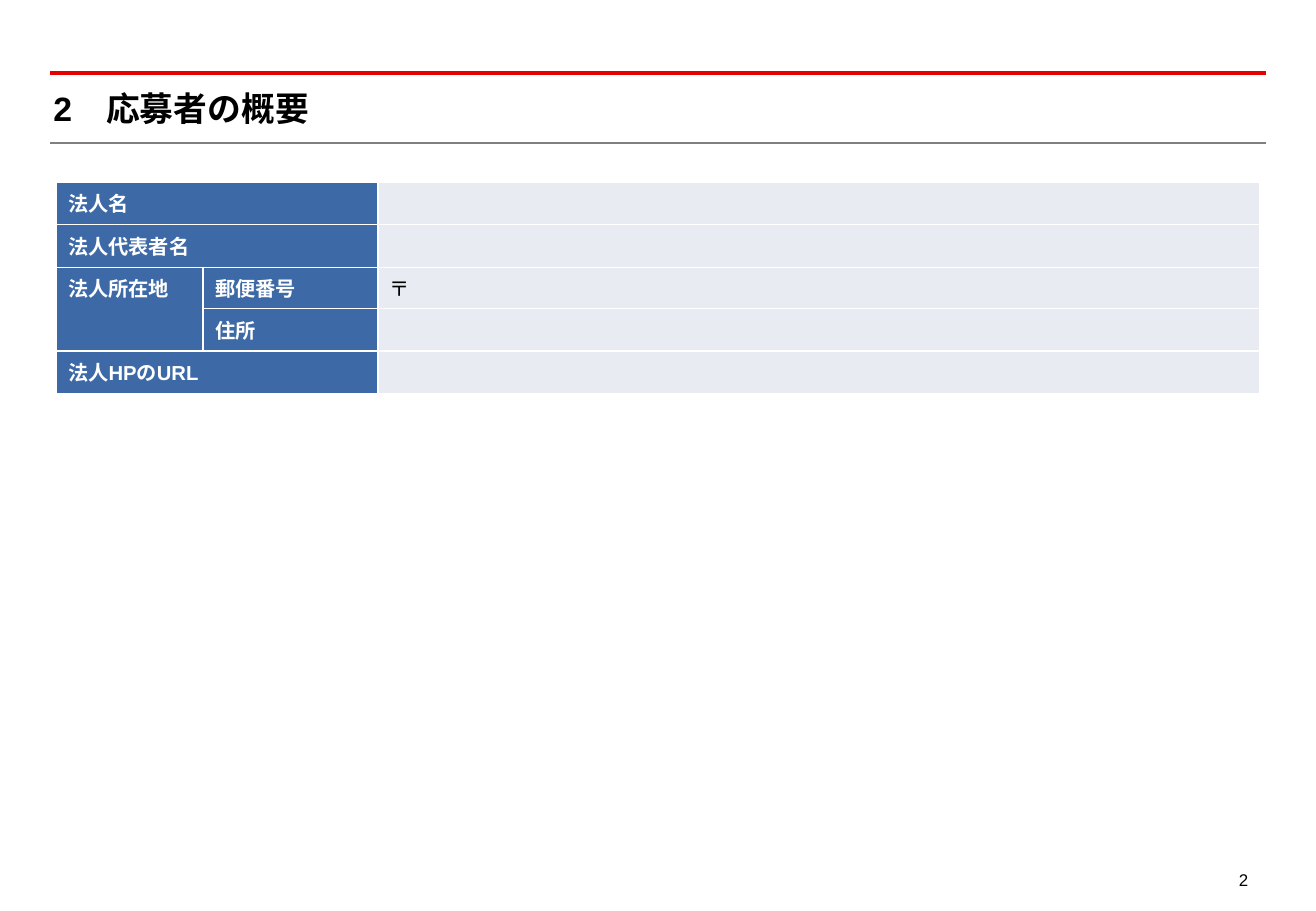
import pptx
import pptx.util
import pptx.dml.color
import pptx.enum.shapes
import pptx.enum.text
import pptx.oxml.ns
import lxml.etree

SLIDE_W, SLIDE_H = 10.83, 7.5
COLORS = {"red": "E60000", "gray": "808080", "black": "000000",
          "white": "FFFFFF", "label": "3D6AA7", "entry": "E8EBF1"}
COLUMNS = (1.21, 1.44, 7.26)
ROWS = (("法人名", None, ""),
        ("法人代表者名", None, ""),
        ("法人所在地", "郵便番号", "〒"),
        ("", "住所", ""),
        ("法人HPのURL", None, ""))


def inches(value):
    """Return a length in inches."""
    return pptx.util.Inches(value)


def rgb(color):
    """Return a named colour."""
    return pptx.dml.color.RGBColor.from_string(COLORS[color])


def add_run(paragraph, words, size, color="black", bold=False):
    """Add one styled run to a paragraph."""
    run = paragraph.add_run()
    run.text = words
    run.font.name = "Arial"
    run.font.size = pptx.util.Pt(size)
    run.font.bold = bold
    run.font.color.rgb = rgb(color)


def add_rule(slide, left, top, width, color, weight):
    """Draw a horizontal rule."""
    rule = slide.shapes.add_connector(
        pptx.enum.shapes.MSO_CONNECTOR.STRAIGHT,
        inches(left), inches(top), inches(left + width), inches(top))
    rule.line.color.rgb = rgb(color)
    rule.line.width = pptx.util.Pt(weight)
    properties = rule._element.spPr
    lxml.etree.SubElement(properties, pptx.oxml.ns.qn("a:effectLst"))


def add_heading(slide, left, top, width, height):
    """Place the section title between its two rules."""
    add_rule(slide, left, top, width, "red", 2)
    add_rule(slide, left, top + height, width, "gray", 1.25)
    title = slide.shapes.add_textbox(
        inches(left + 0.03), inches(top + 0.2 * height),
        inches(width - 0.1), inches(0.6 * height)).text_frame
    title.word_wrap = True
    title.vertical_anchor = pptx.enum.text.MSO_ANCHOR.MIDDLE
    title.margin_left = title.margin_right = 0
    title.margin_top = title.margin_bottom = 0
    add_run(title.paragraphs[0], "2　応募者の概要", 20, bold=True)


def style_cell(cell, fill):
    """Give a cell white borders, tight margins and a fill."""
    properties = cell._tc.get_or_add_tcPr()
    for side in ("lnL", "lnR", "lnT", "lnB"):
        border = lxml.etree.SubElement(
            properties, pptx.oxml.ns.qn("a:" + side), w="12700")
        solid = lxml.etree.SubElement(border, pptx.oxml.ns.qn("a:solidFill"))
        lxml.etree.SubElement(
            solid, pptx.oxml.ns.qn("a:srgbClr"), val=COLORS["white"])
    cell.margin_left = cell.margin_right = inches(0.1)
    cell.margin_top, cell.margin_bottom = inches(0.05), 0
    cell.fill.solid()
    cell.fill.fore_color.rgb = rgb(fill)


def add_applicant_table(slide, left, top, width, height):
    """Place the applicant form with merged label cells."""
    form = slide.shapes.add_table(
        len(ROWS), len(COLUMNS), inches(left), inches(top),
        inches(width), inches(height)).table
    form.first_row = form.horz_banding = False
    for column, share in zip(form.columns, COLUMNS):
        column.width = inches(width * share / sum(COLUMNS))
    for r, entries in enumerate(ROWS):
        form.rows[r].height = inches(height / len(ROWS))
        for c, words in enumerate(entries):
            cell = form.cell(r, c)
            is_label = c < 2
            style_cell(cell, "label" if is_label else "entry")
            if words:
                add_run(cell.text_frame.paragraphs[0], words, 12,
                        "white" if is_label else "black", is_label)
        if entries[1] is None:
            form.cell(r, 0).merge(form.cell(r, 1))
    form.cell(2, 0).merge(form.cell(3, 0))


def add_page_number(slide, left, top, width, height):
    """Place the right-aligned page number."""
    page = slide.shapes.add_textbox(
        inches(left), inches(top), inches(width), inches(height)).text_frame
    paragraph = page.paragraphs[0]
    paragraph.alignment = pptx.enum.text.PP_ALIGN.RIGHT
    paragraph.line_spacing = 1.2
    page.word_wrap = True
    add_run(paragraph, "2", 10)


def main():
    """Build and save the slide."""
    deck = pptx.Presentation()
    deck.slide_width, deck.slide_height = inches(SLIDE_W), inches(SLIDE_H)
    slide = deck.slides.add_slide(deck.slide_layouts[6])
    margin = 0.41
    add_heading(slide, margin, 0.08 * SLIDE_H, SLIDE_W - 2 * margin, 0.58)
    add_applicant_table(slide, 0.46, 0.2 * SLIDE_H, sum(COLUMNS), 1.7)
    add_page_number(slide, 9.93, 7.08, 0.44, 0.28)
    deck.save("out.pptx")


if __name__ == "__main__":
    main()
